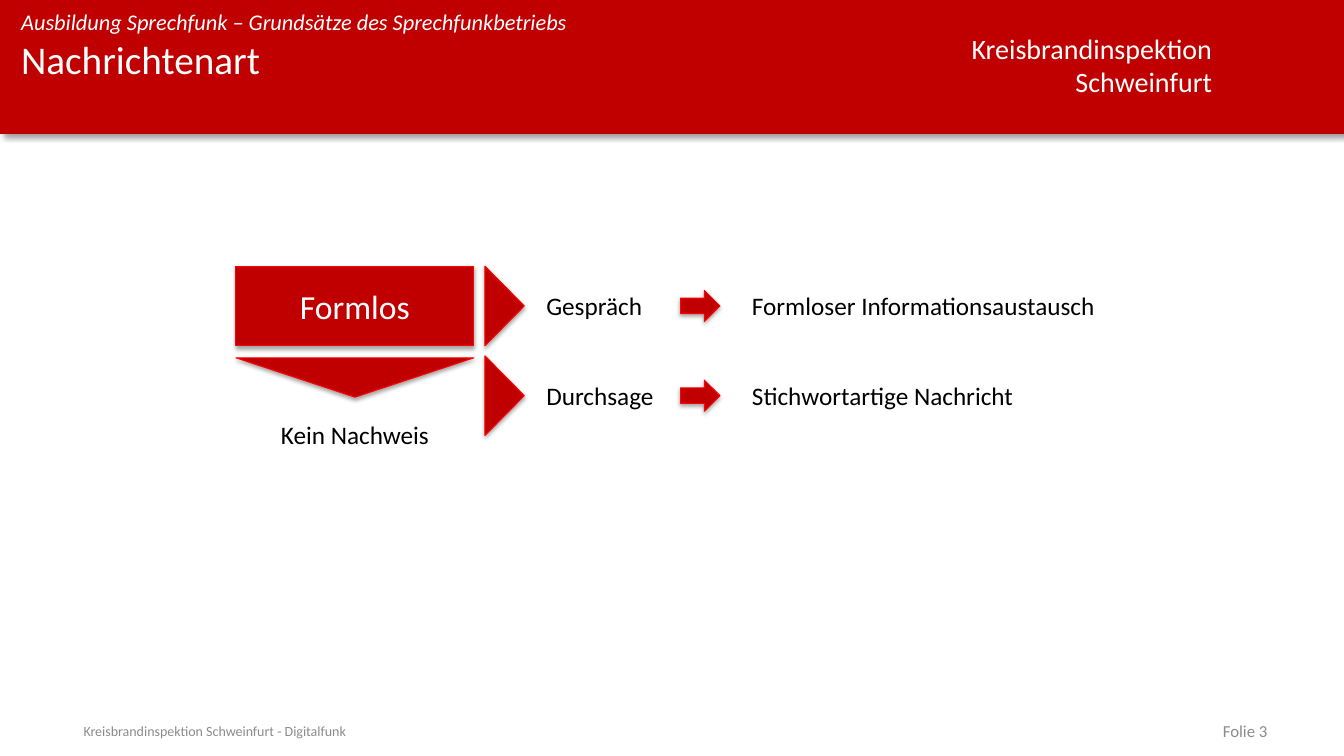
from lxml import etree
from pptx import Presentation
from pptx import util as u
from pptx.dml.color import RGBColor
from pptx.enum import shapes, text
from pptx.oxml import ns

HEADER = {
    "course": "Ausbildung Sprechfunk – Grundsätze des Sprechfunkbetriebs",
    "title": "Nachrichtenart",
    "district": ["Kreisbrandinspektion", "Schweinfurt"],
}
FOOTER = {"sender": "Kreisbrandinspektion Schweinfurt - Digitalfunk", "number": "Folie 3"}
FORM = {"name": "Formlos", "proof": "Kein Nachweis"}
MESSAGES = [
    ("Gespräch", 1.16, "Formloser Informationsaustausch", 3.64),
    ("Durchsage", 1.28, "Stichwortartige Nachricht", 2.82),
]

THEME = {
    "font": "Calibri",
    "red": "C00000", "edge": "FF0000", "white": "FFFFFF", "black": "000000", "grey": "8C8C8C",
    "title": 28, "form": 24, "district": 20, "body": 18, "course": 16, "number": 12, "sender": 10,
    "band_shadow": (40, 4, 3, 45),
    "part_shadow": (35, 3.1, 1.8, 90),
}

SLIDE_W, SLIDE_H = 13.33, 7.5
BAND_H = 1.33
HEAD_X, HEAD_W = 0.21, 8.43
FORM_X, FORM_Y, FORM_W, FORM_H = 2.34, 2.64, 2.36, 0.79
POINTER = 0.39
ROW_STEP = 0.89
ARROW_X, ARROW_H = 6.75, 0.31
KIND_X, MEANING_X = 5.32, 7.36
LABEL_H = 0.4
FOOT_Y, FOOT_H = 7.15, 0.2

SHAPE = shapes.MSO_SHAPE
ALIGN = text.PP_ALIGN
MIDDLE = text.MSO_ANCHOR.MIDDLE

prs = Presentation()
prs.slide_width, prs.slide_height = u.Inches(SLIDE_W), u.Inches(SLIDE_H)
slide = prs.slides.add_slide(prs.slide_layouts[6])


def color(key):
    return RGBColor.from_string(THEME[key])


def write(frame, lines, size, ink, align=ALIGN.LEFT, italic=None, **frame_format):
    for attribute, value in frame_format.items():
        setattr(frame, attribute, value)
    for i, line in enumerate(lines):
        paragraph = frame.paragraphs[0] if i == 0 else frame.add_paragraph()
        paragraph.alignment = align
        run = paragraph.add_run()
        run.text = line
        run.font.color.rgb = color(ink)
        font = {"name": THEME["font"], "size": u.Pt(THEME[size]), "italic": italic}
        for attribute, value in font.items():
            setattr(run.font, attribute, value)


def add_text(box, lines, size, ink, **text_format):
    frame = slide.shapes.add_textbox(*map(u.Inches, box)).text_frame
    write(frame, lines, size, ink, **text_format)


def add_part(preset, box, shadow="part_shadow", rotation=0, edge=True):
    part = slide.shapes.add_shape(preset, *map(u.Inches, box))
    part.rotation = rotation
    part.fill.solid()
    part.fill.fore_color.rgb = color("red")
    if edge:
        part.line.color.rgb = color("edge")
        part.line.width = u.Pt(0.75)
    else:
        part.line.fill.background()
    part.shadow.inherit = False
    opacity, blur, distance, angle = THEME[shadow]
    effects = part.element.spPr.find(ns.qn("a:effectLst"))
    outer = etree.SubElement(
        effects, ns.qn("a:outerShdw"), blurRad=str(u.Pt(blur)), dist=str(u.Pt(distance)),
        dir=str(angle * 60000), algn="tl", rotWithShape="0")
    shade = etree.SubElement(outer, ns.qn("a:srgbClr"), val=THEME["black"])
    etree.SubElement(shade, ns.qn("a:alpha"), val=str(opacity * 1000))
    return part


flush = {f"margin_{side}": 0 for side in ("left", "top", "right", "bottom")}
add_part(SHAPE.RECTANGLE, (0, 0, SLIDE_W, BAND_H), "band_shadow", edge=False)
add_text((9.51, 0.26, 2.61, 0.77), HEADER["district"], "district", "white",
         align=ALIGN.RIGHT, word_wrap=False)
add_text((HEAD_X, 0.08, HEAD_W, 0.27), [HEADER["course"]], "course", "white",
         italic=True, word_wrap=True, **flush)
add_text((HEAD_X, 0.35, HEAD_W, 0.99), [HEADER["title"]], "title", "white",
         word_wrap=True, **flush)

form = add_part(SHAPE.RECTANGLE, (FORM_X, FORM_Y, FORM_W, FORM_H))
write(form.text_frame, [FORM["name"]], "form", "white", align=ALIGN.CENTER, vertical_anchor=MIDDLE)
add_part(SHAPE.ISOSCELES_TRIANGLE, (FORM_X, 3.55, FORM_W, POINTER), rotation=180)
proof_w = 1.69
add_text((FORM_X + (FORM_W - proof_w) / 2, 4.11, proof_w, LABEL_H), [FORM["proof"]],
         "body", "black", align=ALIGN.CENTER, word_wrap=False)

for row, (kind, kind_w, meaning, meaning_w) in enumerate(MESSAGES):
    middle = FORM_Y + FORM_H / 2 + row * ROW_STEP
    add_part(SHAPE.ISOSCELES_TRIANGLE, (4.61, middle - POINTER / 2, FORM_H, POINTER), rotation=90)
    add_part(SHAPE.RIGHT_ARROW, (ARROW_X, middle - ARROW_H / 2, POINTER, ARROW_H))
    for label, x, width in ((kind, KIND_X, kind_w), (meaning, MEANING_X, meaning_w)):
        add_text((x, middle - LABEL_H / 2, width, LABEL_H), [label], "body", "black",
                 word_wrap=False)

for key, x, width, align in (("sender", 0.73, 8.05, ALIGN.LEFT), ("number", 9.56, 3.11, ALIGN.RIGHT)):
    add_text((x, FOOT_Y, width, FOOT_H), [FOOTER[key]], key, "grey", align=align,
             word_wrap=True, vertical_anchor=MIDDLE)

prs.save("out.pptx")
